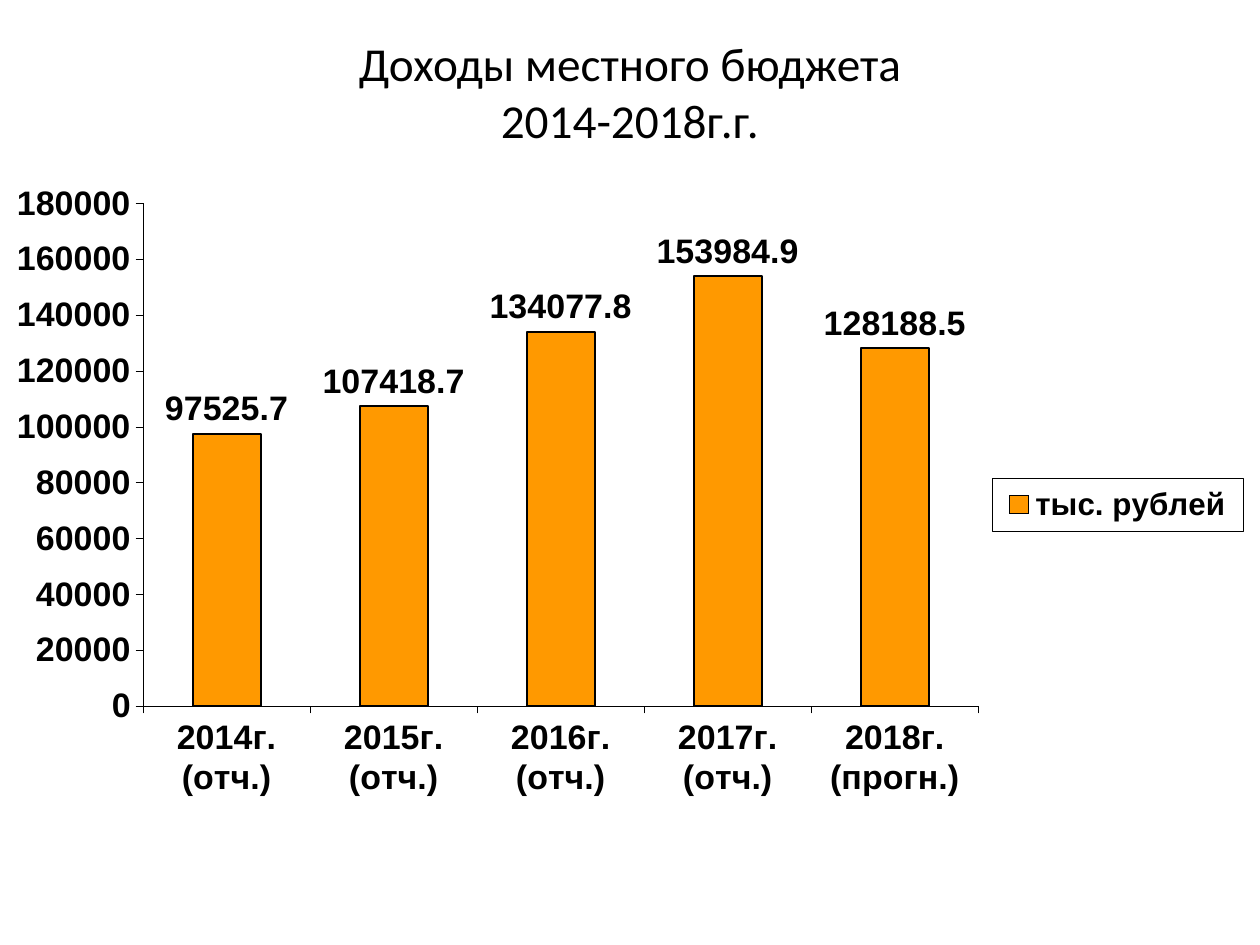
import dataclasses

import pptx
import pptx.chart.data
import pptx.dml.color
import pptx.enum.chart
import pptx.enum.text
import pptx.oxml
import pptx.oxml.ns
import pptx.util
from pptx.util import Cm, Pt

BLACK = pptx.dml.color.RGBColor(0x00, 0x00, 0x00)
ORANGE = pptx.dml.color.RGBColor(0xFF, 0x99, 0x00)
TITLE_LINES = ("Доходы местного бюджета", "2014-2018г.г.")
UNIT = "тыс. рублей"


@dataclasses.dataclass(frozen=True)
class YearIncome:
    year: str
    amount: float


@dataclasses.dataclass(frozen=True)
class Area:
    x: float
    y: float
    w: float
    h: float


INCOMES = (
    YearIncome("2014г. (отч.)", 97525.7),
    YearIncome("2015г. (отч.)", 107418.7),
    YearIncome("2016г. (отч.)", 134077.8),
    YearIncome("2017г. (отч.)", 153984.9),
    YearIncome("2018г. (прогн.)", 128188.5),
)
PLOT_AREA = Area(0.114, 0.043, 0.665, 0.763)
LEGEND_AREA = Area(0.79, 0.46, 0.2, 0.08)


def style_font(font, size: float, name: str = "Arial", bold: bool = True) -> None:
    font.name = name
    font.size = Pt(size)
    font.bold = bold
    font.color.rgb = BLACK


def style_line(line, width: float) -> None:
    line.color.rgb = BLACK
    line.width = Pt(width)


def layout_xml(area: Area, inner: bool = False):
    target = '<c:layoutTarget val="inner"/>' if inner else ""
    sides = "".join(f'<c:{side}Mode val="edge"/>' for side in "xy")
    sizes = "".join(
        f'<c:{side} val="{value}"/>'
        for side, value in dataclasses.asdict(area).items()
    )
    return pptx.oxml.parse_xml(
        f'<c:layout {pptx.oxml.ns.nsdecls("c")}>'
        f"<c:manualLayout>{target}{sides}{sizes}</c:manualLayout></c:layout>"
    )


def place_plot(chart, area: Area) -> None:
    plot_area = chart.element.find(".//" + pptx.oxml.ns.qn("c:plotArea"))
    for layout in plot_area.findall(pptx.oxml.ns.qn("c:layout")):
        plot_area.remove(layout)
    plot_area.insert(0, layout_xml(area, inner=True))


def style_legend(chart, area: Area) -> None:
    chart.has_legend = True
    legend = chart.legend
    legend.position = pptx.enum.chart.XL_LEGEND_POSITION.RIGHT
    legend.include_in_layout = False
    style_font(legend.font, 17.9)
    element = chart.element.find(".//" + pptx.oxml.ns.qn("c:legend"))
    for layout in element.findall(pptx.oxml.ns.qn("c:layout")):
        element.remove(layout)
    element.find(pptx.oxml.ns.qn("c:legendPos")).addnext(layout_xml(area))
    border = pptx.oxml.parse_xml(
        f'<c:spPr {pptx.oxml.ns.nsdecls("c", "a")}><a:noFill/>'
        f'<a:ln w="{Pt(0.27)}"><a:solidFill><a:srgbClr val="{BLACK}"/>'
        "</a:solidFill></a:ln></c:spPr>"
    )
    element.find(pptx.oxml.ns.qn("c:txPr")).addprevious(border)


def style_axis(axis) -> None:
    axis.has_major_gridlines = False
    axis.major_tick_mark = pptx.enum.chart.XL_TICK_MARK.OUTSIDE
    axis.minor_tick_mark = pptx.enum.chart.XL_TICK_MARK.NONE
    style_font(axis.tick_labels.font, 19.4)
    style_line(axis.format.line, 0.27)


def add_title(slide) -> None:
    title = slide.shapes.title
    title.left, title.top = Cm(1.27), Cm(0.76)
    title.width, title.height = Cm(22.86), Cm(2.16)
    frame = title.text_frame
    frame.word_wrap = True
    frame.vertical_anchor = pptx.enum.text.MSO_ANCHOR.MIDDLE
    heading = frame.paragraphs[0]
    heading.alignment = pptx.enum.text.PP_ALIGN.CENTER
    for index, line in enumerate(TITLE_LINES):
        if index:
            heading.add_line_break()
        run = heading.add_run()
        run.text = line
        style_font(run.font, 27, "Calibri", bold=False)


def add_income_chart(slide) -> None:
    income_data = pptx.chart.data.CategoryChartData(number_format="General")
    income_data.categories = [income.year for income in INCOMES]
    income_data.add_series(UNIT, [income.amount for income in INCOMES])
    chart = slide.shapes.add_chart(
        pptx.enum.chart.XL_CHART_TYPE.COLUMN_CLUSTERED,
        Cm(0), Cm(3.53), Cm(25.32), Cm(13.28), income_data,
    ).chart
    chart.has_title = False
    style_font(chart.font, 19.4)
    place_plot(chart, PLOT_AREA)
    style_legend(chart, LEGEND_AREA)

    for axis in (chart.category_axis, chart.value_axis):
        style_axis(axis)
    chart.category_axis.tick_label_position = pptx.enum.chart.XL_TICK_LABEL_POSITION.LOW
    chart.value_axis.minimum_scale = 0
    chart.value_axis.maximum_scale = 180000
    chart.value_axis.major_unit = 20000

    columns = chart.plots[0]
    columns.vary_by_categories = False
    columns.gap_width = 146
    income_series = columns.series[0]
    income_series.format.fill.solid()
    income_series.format.fill.fore_color.rgb = ORANGE
    style_line(income_series.format.line, 1.08)
    labels = income_series.data_labels
    labels.show_value = True
    labels.position = pptx.enum.chart.XL_LABEL_POSITION.OUTSIDE_END
    style_font(labels.font, 19.4)


def main() -> None:
    presentation = pptx.Presentation()
    presentation.slide_width = Cm(25.4)
    presentation.slide_height = Cm(19.05)
    slide = presentation.slides.add_slide(presentation.slide_layouts[5])
    add_title(slide)
    add_income_chart(slide)
    presentation.save("out.pptx")


if __name__ == "__main__":
    main()
